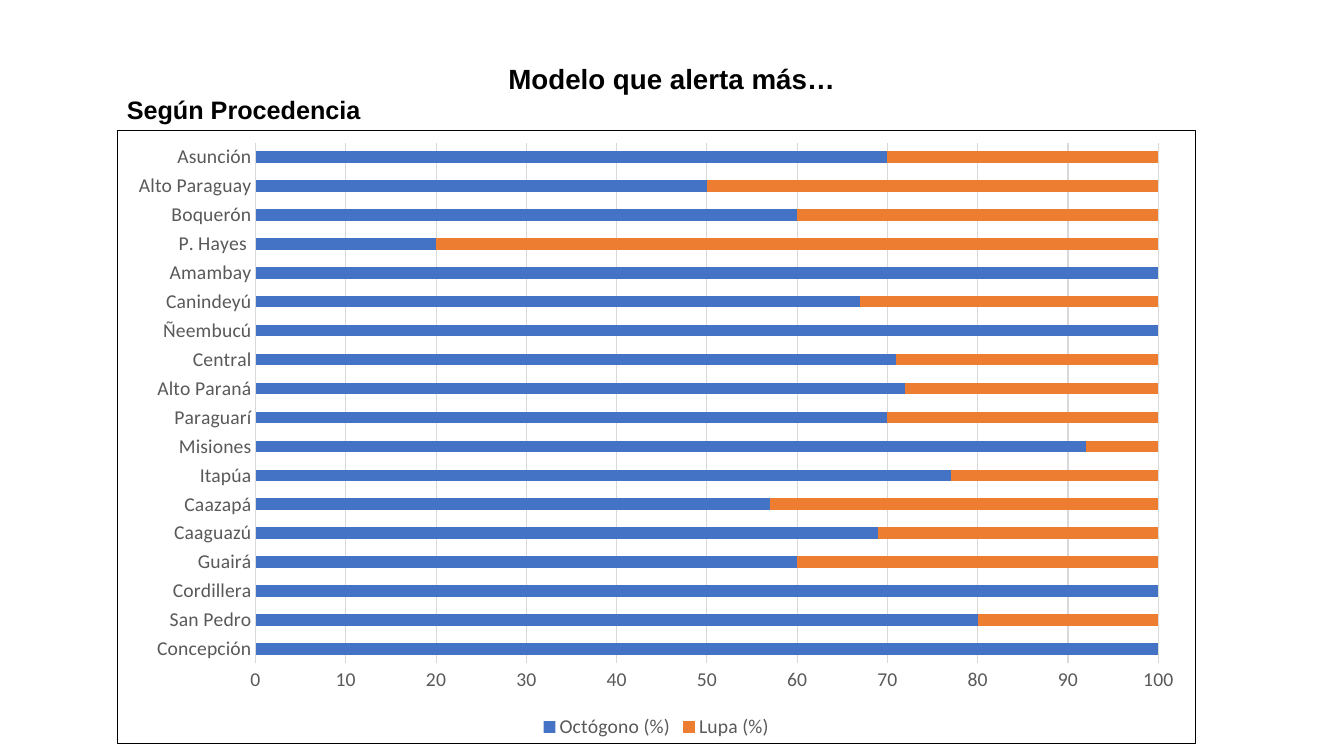
from dataclasses import dataclass

from lxml import etree
from pptx import Presentation
from pptx import util as u
from pptx.chart import data as cd
from pptx.dml import color as col
from pptx.enum import chart as ch, text
from pptx.oxml import ns


@dataclass(frozen=True)
class Theme:
    ink: str = "000000"
    label: str = "595959"
    grid: str = "D9D9D9"
    series: tuple = ("4472C4", "ED7D31")
    heading_font: str = "Arial"
    chart_font: str = "Calibri"
    title_size: float = 19.8
    subtitle_size: float = 18
    chart_size: float = 14
    line: float = 0.75


class Deck:
    def __init__(self, theme, width, height):
        self.t = theme
        self.prs = Presentation()
        self.prs.slide_width, self.prs.slide_height = u.Pt(width), u.Pt(height)
        self.s = self.prs.slides.add_slide(self.prs.slide_layouts[6])

    def font(self, f, name, size, color, bold=False):
        f.name, f.size, f.bold = name, u.Pt(size), bold
        f.color.rgb = col.RGBColor.from_string(color)

    def line(self, ln, color):
        ln.color.rgb = col.RGBColor.from_string(color)
        ln.width = u.Pt(self.t.line)

    def heading(self, words, box, size, align):
        sp = self.s.shapes.add_textbox(*map(u.Pt, box))
        tf = sp.text_frame
        tf.word_wrap = True
        tf.vertical_anchor = text.MSO_ANCHOR.MIDDLE
        p = tf.paragraphs[0]
        p.alignment = align
        r = p.add_run()
        r.text = words
        self.font(r.font, self.t.heading_font, size, self.t.ink, True)

    def border(self, chart):
        a, c = ns.nsdecls("a"), ns.nsdecls("c")
        sp_pr = etree.fromstring(
            f'<c:spPr {c} {a}><a:noFill/><a:ln w="{u.Pt(self.t.line)}"><a:solidFill>'
            f'<a:srgbClr val="{self.t.ink}"/></a:solidFill></a:ln></c:spPr>')
        chart._chartSpace.find(ns.qn("c:chart")).addnext(sp_pr)

    def stacked_bars(self, names, rows, box):
        t = self.t
        data = cd.CategoryChartData(number_format="General")
        data.categories = [place for place, _ in rows]
        shares = [share for _, share in rows]
        data.add_series(names[0], shares)
        data.add_series(names[1], [100 - share for share in shares])
        chart = self.s.shapes.add_chart(
            ch.XL_CHART_TYPE.BAR_STACKED, *map(u.Pt, box), data).chart
        self.font(chart.font, t.chart_font, t.chart_size, t.label)
        chart.has_title = False
        self.border(chart)

        # Bars
        plot = chart.plots[0]
        plot.gap_width, plot.overlap, plot.vary_by_categories = 150, 100, False
        for series, color in zip(plot.series, t.series):
            series.format.fill.solid()
            series.format.fill.fore_color.rgb = col.RGBColor.from_string(color)

        # Axes
        cat, val = chart.category_axis, chart.value_axis
        for axis in (cat, val):
            axis.major_tick_mark = axis.minor_tick_mark = ch.XL_TICK_MARK.NONE
            self.font(axis.tick_labels.font, t.chart_font, t.chart_size, t.label)
        self.line(cat.format.line, t.grid)
        val.format.line.fill.background()
        val.minimum_scale, val.maximum_scale, val.major_unit = 0, 100, 10
        val.has_major_gridlines = True
        self.line(val.major_gridlines.format.line, t.grid)

        # Legend
        chart.has_legend = True
        chart.legend.position = ch.XL_LEGEND_POSITION.BOTTOM
        chart.legend.include_in_layout = False
        self.font(chart.legend.font, t.chart_font, t.chart_size, t.label)


OCTAGON_SHARE = [
    ("Concepción", 100), ("San Pedro", 80), ("Cordillera", 100),
    ("Guairá", 60), ("Caaguazú", 69), ("Caazapá", 57),
    ("Itapúa", 77), ("Misiones", 92), ("Paraguarí", 70),
    ("Alto Paraná", 72), ("Central", 71), ("Ñeembucú", 100),
    ("Canindeyú", 67), ("Amambay", 100), ("P. Hayes ", 20),
    ("Boquerón", 60), ("Alto Paraguay", 50), ("Asunción", 70),
]


def main():
    theme = Theme()
    deck = Deck(theme, 960, 540)
    # Title
    deck.heading("Modelo que alerta más…", (70.5, 42, 818.5, 27.5),
                 theme.title_size, text.PP_ALIGN.CENTER)
    # Chart
    deck.stacked_bars(("Octógono (%)", "Lupa (%)"), OCTAGON_SHARE,
                      (83.5, 92.75, 770.5, 438.5))
    # Subtitle
    deck.heading("Según Procedencia", (83.5, 63.5, 480, 29),
                 theme.subtitle_size, text.PP_ALIGN.LEFT)
    deck.prs.save("out.pptx")


if __name__ == "__main__":
    main()
